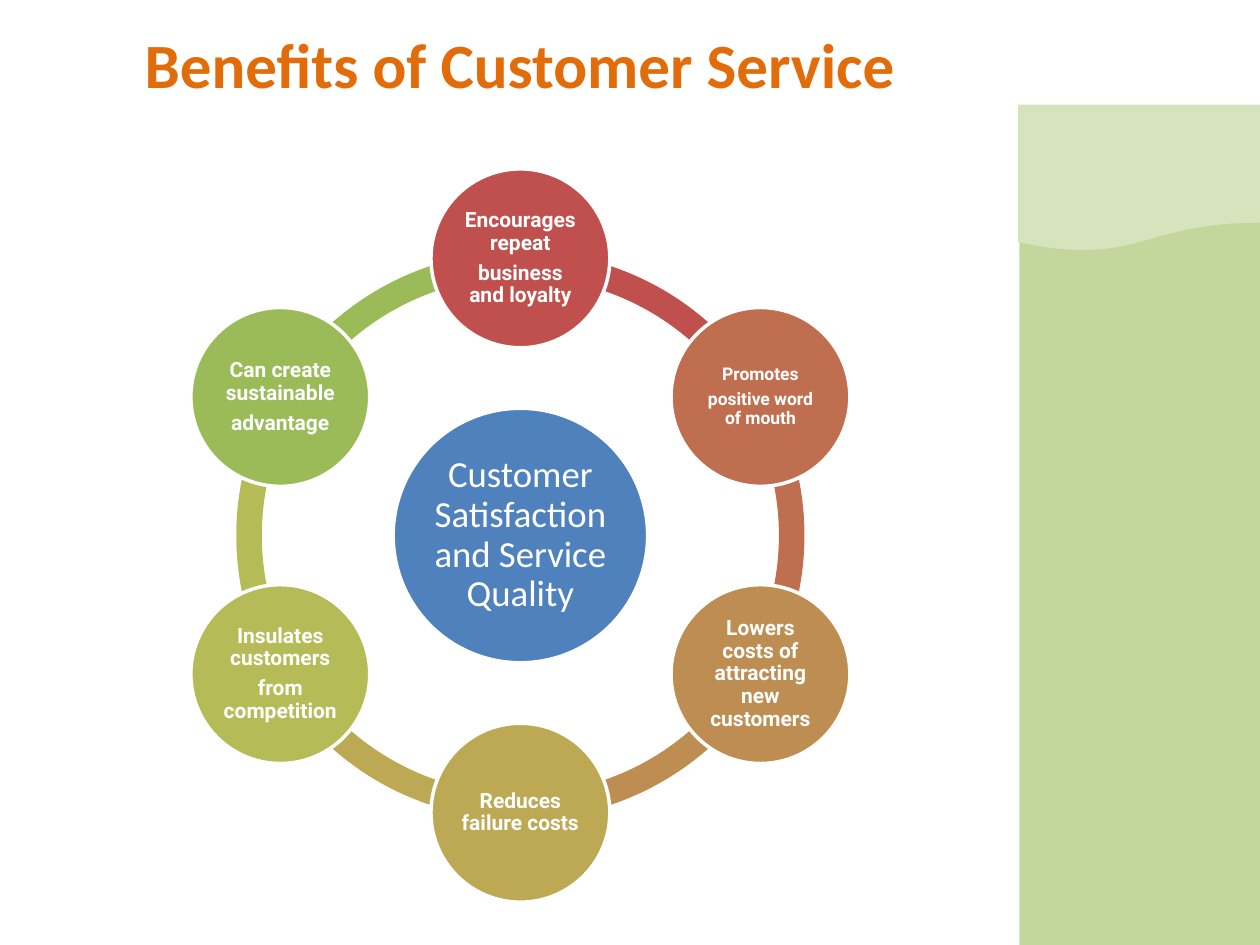
from math import cos, radians, sin

from pptx import Presentation
from pptx.dml.color import RGBColor
from pptx.enum.shapes import MSO_SHAPE
from pptx.enum.text import MSO_ANCHOR, PP_ALIGN
from pptx.util import Inches, Pt

TITLE = "Benefits of Customer Service"
HUB = "Customer Satisfaction and Service Quality"
BENEFITS = [
    (["Encourages repeat", "business and loyalty"], "C0504D", 12),
    (["Promotes", "positive word of mouth"], "BF6F4F", 10),
    (["Lowers costs of attracting new customers"], "BE8D52", 12),
    (["Reduces failure costs"], "BDA954", 12),
    (["Insulates customers", "from competition"], "B5BC57", 12),
    (["Can create sustainable", "advantage"], "9BBB59", 12),
]
PANELS = [
    (MSO_SHAPE.RECTANGLE, (8.09, 1.11, 1.91, 6.39), "C3D69B"),
    (MSO_SHAPE.FLOWCHART_DOCUMENT, (8.08, 0.83, 1.92, 1.17), "D6E3BC"),
]
CENTER_X, CENTER_Y = 4.13, 4.25
ORBIT = 2.2
RING_SIZE, HUB_SIZE, BUBBLE_SIZE = 4.51, 2.02, 1.42
STEP = 360 / len(BENEFITS)
TOP = 270
ANGLE_UNIT = 0.6


def color(value):
    return RGBColor.from_string(value)


def centered(x, y, size):
    return x - size / 2, y - size / 2, size, size


def add_shape(kind, place, fill, outlined=False):
    shape = page.shapes.add_shape(kind, *map(Inches, place))
    shape.shadow.inherit = False
    shape.fill.solid()
    shape.fill.fore_color.rgb = color(fill)
    if outlined:
        shape.line.color.rgb = color("FFFFFF")
        shape.line.width = Pt(2)
    else:
        shape.line.fill.background()
    return shape


def write(box, paragraphs, size, font="Calibri", fill="FFFFFF", bold=False,
          inset=0.02, line_spacing=0.9, gap=0.35):
    frame = box.text_frame
    frame.word_wrap = True
    frame.vertical_anchor = MSO_ANCHOR.MIDDLE
    frame.margin_left = frame.margin_right = Inches(inset)
    frame.margin_top = frame.margin_bottom = Inches(inset)
    for index, text in enumerate(paragraphs):
        para = frame.add_paragraph() if index else frame.paragraphs[0]
        para.alignment = PP_ALIGN.CENTER
        para.line_spacing = line_spacing
        para.space_after = Pt(size * gap)
        span = para.add_run()
        span.text = text
        span.font.name = font
        span.font.size = Pt(size)
        span.font.bold = bold
        span.font.color.rgb = color(fill)


deck = Presentation()
deck.slide_width, deck.slide_height = Inches(10), Inches(7.5)
page = deck.slides.add_slide(deck.slide_layouts[6])

for kind, place, fill in PANELS:
    add_shape(kind, place, fill)

title = page.shapes.add_textbox(*map(Inches, (0.83, 0.03, 6.59, 0.94)))
write(title, [TITLE], 36, fill="E36C0A", bold=True, inset=0.05, line_spacing=1.0, gap=0)

for index, (_, fill, _) in reversed(list(enumerate(BENEFITS))):
    start = (TOP + index * STEP) % 360
    arc = add_shape(MSO_SHAPE.BLOCK_ARC, centered(CENTER_X, CENTER_Y, RING_SIZE), fill)
    arc.adjustments[0] = start * ANGLE_UNIT
    arc.adjustments[1] = (start + STEP) % 360 * ANGLE_UNIT
    arc.adjustments[2] = 0.045

hub = add_shape(MSO_SHAPE.OVAL, centered(CENTER_X, CENTER_Y, HUB_SIZE), "4F81BD", outlined=True)
write(hub, [HUB], 21, inset=0.03)

for index, (lines, fill, size) in enumerate(BENEFITS):
    angle = radians(TOP + index * STEP)
    x, y = CENTER_X + ORBIT * cos(angle), CENTER_Y + ORBIT * sin(angle)
    bubble = add_shape(MSO_SHAPE.OVAL, centered(x, y, BUBBLE_SIZE), fill, outlined=True)
    write(bubble, lines, size, font="Roboto", bold=True)

deck.save("out.pptx")
